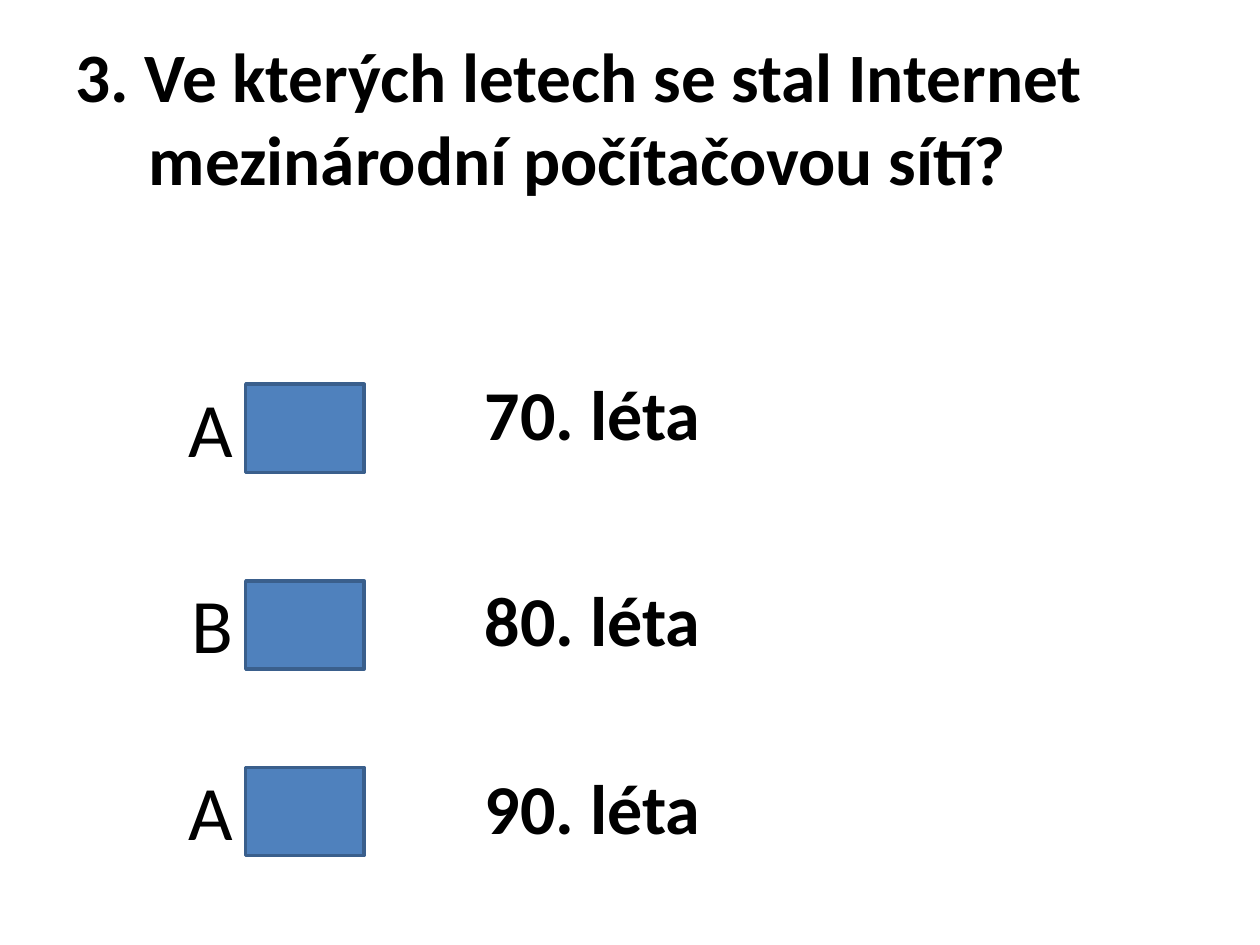
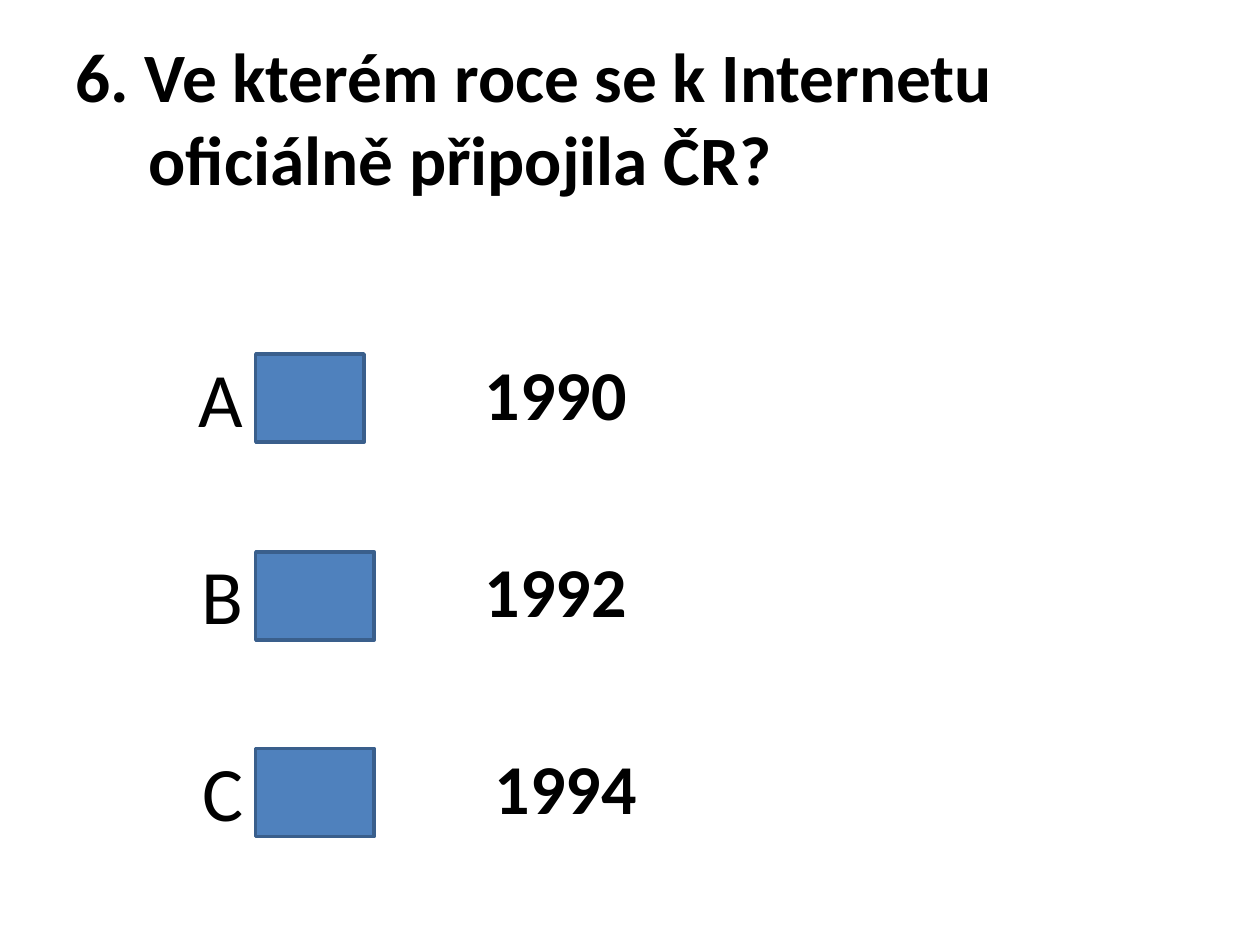
from dataclasses import dataclass
from typing import Any

from pptx import Presentation
from pptx.dml.color import RGBColor
from pptx.enum.shapes import MSO_SHAPE as Shape
from pptx.enum.text import MSO_ANCHOR as Anchor, MSO_AUTO_SIZE as Fit, PP_ALIGN as Align
from pptx.util import Inches, Pt


@dataclass(frozen=True)
class Theme:
    font: str = "Calibri"
    ink: RGBColor = RGBColor(0, 0, 0)
    fill: RGBColor = RGBColor(0x4F, 0x81, 0xBD)
    edge: RGBColor = RGBColor(0x3A, 0x5F, 0x8C)
    rule: float = 2
    title: float = 39.6
    label: float = 44
    reply: float = 40


@dataclass(frozen=True)
class Choice:
    label: str
    reply: str
    top: float
    reply_top: float
    reply_width: float
    reply_left: float = 3.75
    width: float = 0.94


@dataclass(frozen=True)
class Quiz:
    title: str
    left: float
    items: tuple[Choice, ...]


THEME = Theme()
LABEL_WIDTH = 1.09
LABEL_RISE = 0.08
HANG = 0.58

QUIZZES = (
    Quiz("3. Ve kterých letech se stal Internet mezinárodní počítačovou sítí?", 1.95, (
        Choice("A", "70. léta", 3.05, 2.89, 3.05),
        Choice("B", "80. léta", 4.61, 4.53, 3.98),
        Choice("A", "90. léta", 6.09, 6.02, 3.67),
    )),
    Quiz("6. Ve kterém roce se k Internetu oficiálně připojila ČR?", 2.03, (
        Choice("A", "1990", 2.81, 2.73, 5, width=0.86),
        Choice("B", "1992", 4.38, 4.3, 5.31),
        Choice("C", "1994", 5.94, 5.86, 5.31, reply_left=3.83),
    )),
)


def apply(target: Any, values: dict[str, Any]) -> None:
    for name, value in values.items():
        setattr(target, name, value)


def place(left: float, top: float, width: float, height: float) -> dict[str, Any]:
    names = ("left", "top", "width", "height")
    return {n: Inches(v) for n, v in zip(names, (left, top, width, height))}


def write(frame: Any, text: str, size: float, bold: bool, align: Any = Align.LEFT) -> Any:
    line = frame.paragraphs[0]
    line.alignment = align
    run = line.add_run()
    run.text = text
    apply(run.font, {"name": THEME.font, "size": Pt(size), "bold": bold})
    run.font.color.rgb = THEME.ink
    return line


def add_title(slide: Any, text: str) -> None:
    title = slide.shapes.title
    apply(title, place(0.5, 0.3, 9, 1.25))
    frame = title.text_frame
    apply(frame, {"word_wrap": True, "auto_size": Fit.NONE, "vertical_anchor": Anchor.MIDDLE})
    line = write(frame, text, THEME.title, True)
    apply_hang = {"marL": Inches(HANG), "indent": Inches(-HANG)}
    for name, value in apply_hang.items():
        line._p.get_or_add_pPr().set(name, str(value))


def add_text(slide: Any, box: dict[str, Any], text: str, size: float,
             bold: bool, align: Any = Align.LEFT) -> None:
    frame = slide.shapes.add_textbox(**box).text_frame
    apply(frame, {"word_wrap": True, "auto_size": Fit.SHAPE_TO_FIT_TEXT})
    write(frame, text, size, bold, align)


def add_choice(slide: Any, left: float, item: Choice) -> None:
    button = slide.shapes.add_shape(
        Shape.ACTION_BUTTON_CUSTOM, **place(left, item.top, item.width, 0.7))
    button.shadow.inherit = False
    button.fill.solid()
    button.fill.fore_color.rgb = THEME.fill
    button.line.color.rgb = THEME.edge
    button.line.width = Pt(THEME.rule)
    add_text(slide, place(left - LABEL_WIDTH, item.top - LABEL_RISE, LABEL_WIDTH, 0.84),
             item.label, THEME.label, False, Align.RIGHT)
    add_text(slide, place(item.reply_left, item.reply_top, item.reply_width, 0.77),
             item.reply, THEME.reply, True)


def main() -> None:
    deck = Presentation()
    apply(deck, {"slide_width": Inches(10), "slide_height": Inches(7.5)})
    for quiz in QUIZZES:
        slide = deck.slides.add_slide(deck.slide_layouts[5])
        add_title(slide, quiz.title)
        for item in quiz.items:
            add_choice(slide, quiz.left, item)
    deck.save("out.pptx")


if __name__ == "__main__":
    main()
